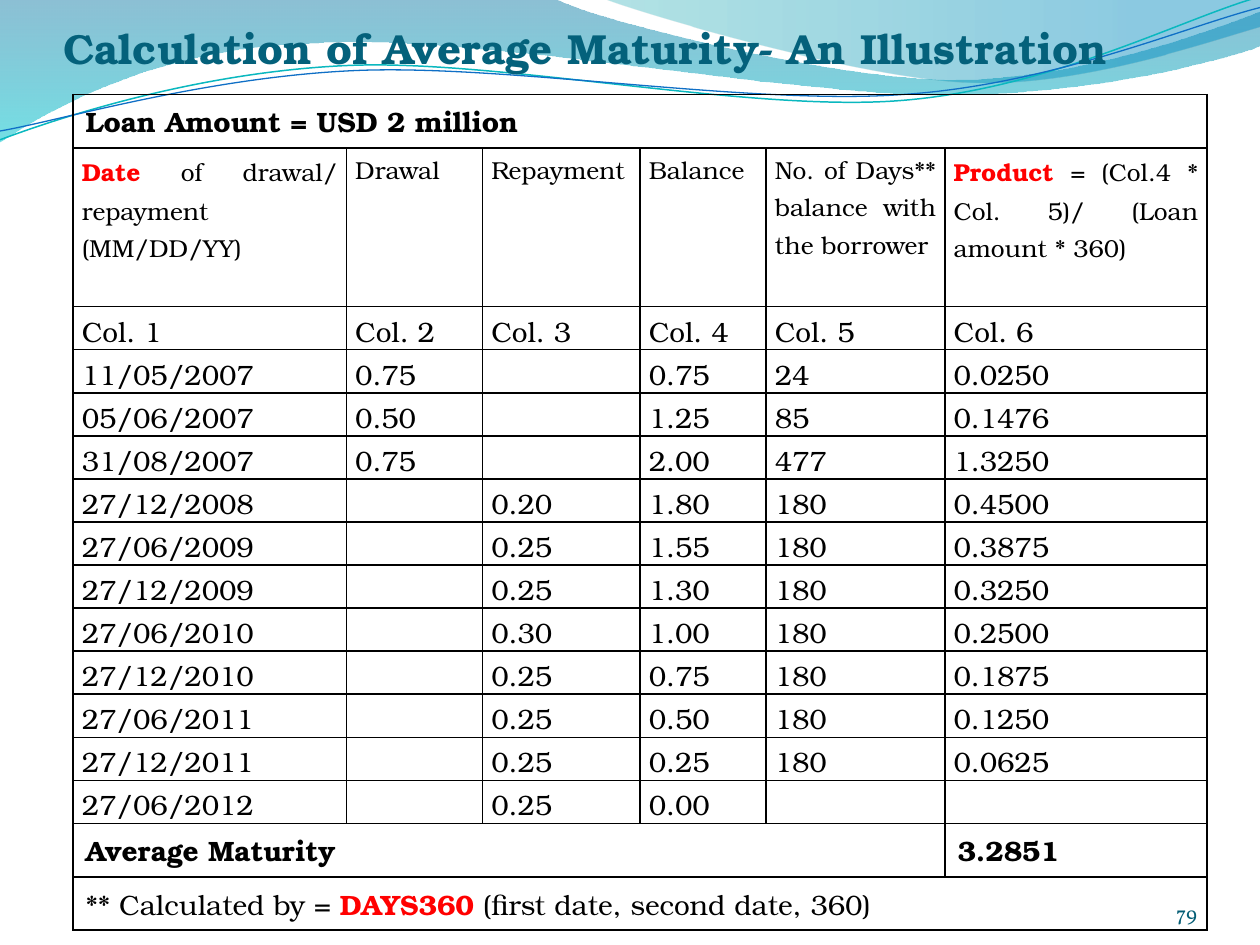
from lxml import etree
from pptx import Presentation
from pptx.dml.color import RGBColor
from pptx.enum.text import MSO_ANCHOR, PP_ALIGN
from pptx.oxml.ns import qn
from pptx.util import Inches, Pt

JUSTIFY, LEFT, RIGHT = PP_ALIGN.JUSTIFY, PP_ALIGN.LEFT, PP_ALIGN.RIGHT
BOTTOM = MSO_ANCHOR.BOTTOM
TITLE_ONLY = 5
FONT, NUMBER_FONT = "TeX Gyre Bonum", "Vollkorn"
BLACK, RED = "000000", "FF0000"

COLUMN_WIDTHS = [2.17, 1.08, 1.25, 1, 1.42, 2.08]
BAND_HEIGHT, HEADER_HEIGHT, ROW_HEIGHT = 0.42, 1.26, 0.34
HEADERS = [
    [("Date", RED, True), (" of drawal/ repayment (MM/DD/YY)", BLACK, False)],
    [("Drawal", BLACK, False)],
    [("Repayment", BLACK, False)],
    [("Balance", BLACK, False)],
    [("No. of Days** balance with the borrower", BLACK, False)],
    [("Product ", RED, True),
     ("= (Col.4 * Col. 5)/ (Loan amount * 360)", BLACK, False)],
]
ROWS = [
    [f"Col. {number}" for number in range(1, 7)],
    ["11/05/2007", "0.75", "", "0.75", "24", "0.0250"],
    ["05/06/2007", "0.50", "", "1.25", "85", "0.1476"],
    ["31/08/2007", "0.75", "", "2.00", "477", "1.3250"],
    ["27/12/2008", "", "0.20", "1.80", "180", "0.4500"],
    ["27/06/2009", "", "0.25", "1.55", "180", "0.3875"],
    ["27/12/2009", "", "0.25", "1.30", "180", "0.3250"],
    ["27/06/2010", "", "0.30", "1.00", "180", "0.2500"],
    ["27/12/2010", "", "0.25", "0.75", "180", "0.1875"],
    ["27/06/2011", "", "0.25", "0.50", "180", "0.1250"],
    ["27/12/2011", "", "0.25", "0.25", "180", "0.0625"],
    ["27/06/2012", "", "0.25", "0.00", "", ""],
]

# Wave outlines in thousandths of the slide width: 2 numbers are a line, 6 a curve.
WAVES = [
    ([(0, 0), (440, -1), (476, 17, 664, 63, 758, 63),
      (853, 63, 958, 26, 1000, 9), (1001, 36),
      (983, 44, 870, 76, 746, 75), (622, 75, 382, 28, 257, 34),
      (129, 36, 46, 83, -1, 113)],
     [(0, "0074A1", 45), (1, "00C6CF", 55)], 270),
    ([(479, -1), (509, 11, 682, 62, 769, 65),
      (856, 69, 961, 32, 1000, 21), (1000, 0)],
     [(0, "00A1A9", 30), (0.8, "008BBF", 45)], 0),
]
RIBBONS = [
    ([(0, 111), (48, 93, 158, 57, 277, 52),
      (395, 47, 593, 89, 713, 80), (833, 71, 938, 15, 998, -2)],
     "0AB8BF", 0.85),
    ([(0, 104), (47, 96, 164, 61, 283, 56),
      (403, 51, 597, 84, 717, 75), (836, 67, 941, 21, 1000, 6)],
     "0F6FC6", 0.75),
]


def color(value):
    return RGBColor.from_string(value)


def add_outline(slide, segments, unit, close):
    """Build the outline through its end points, then bend the curved segments."""
    ends = [segment[-2:] for segment in segments]
    builder = slide.shapes.build_freeform(*ends[0], scale=unit)
    builder.add_line_segments(ends[1:], close=close)
    shape = builder.convert_to_shape()
    shape.shadow.inherit = False
    left, top = (min(axis) for axis in zip(*ends))
    lines = list(shape._element.iter(qn("a:lnTo")))
    for line, segment in zip(lines, segments[1:]):
        if len(segment) == 2:
            continue
        curve = etree.Element(qn("a:cubicBezTo"))
        for x, y in zip(segment[::2], segment[1::2]):
            etree.SubElement(curve, qn("a:pt"), x=str(x - left), y=str(y - top))
        line.getparent().replace(line, curve)
    return shape


def add_wave(slide, segments, stops, angle, unit):
    shape = add_outline(slide, segments, unit, True)
    shape.line.fill.background()
    shape.fill.gradient()
    shape.fill.gradient_angle = angle
    for stop, (position, value, _) in zip(shape.fill.gradient_stops, stops):
        stop.position = position
        stop.color.rgb = color(value)
    tints = list(shape._element.spPr.iter(qn("a:srgbClr")))
    for tint, (_, _, opacity) in zip(tints, stops):
        etree.SubElement(tint, qn("a:alpha"), val=str(opacity * 1000))


def add_ribbon(slide, segments, value, thickness, unit):
    shape = add_outline(slide, segments, unit, False)
    shape.fill.background()
    shape.line.color.rgb = color(value)
    shape.line.width = Pt(thickness)
    return shape


def add_decoration(slide, width):
    unit = width / 1000
    for wave in WAVES:
        add_wave(slide, *wave, unit)
    slide.shapes.add_group_shape([add_ribbon(slide, *ribbon, unit)
                                  for ribbon in RIBBONS])


def write(text_frame, runs, size, font=FONT, align=LEFT, spacing=None):
    """Fill the first paragraph with (text, colour, bold) runs."""
    paragraph = text_frame.paragraphs[0]
    paragraph.alignment, paragraph.line_spacing = align, spacing
    for text, value, bold in runs:
        run = paragraph.add_run()
        run.text = text
        formats = {"name": font, "size": Pt(size), "bold": bold}
        for name, setting in formats.items():
            setattr(run.font, name, setting)
        run.font.color.rgb = color(value)


def set_frame(text_frame, top=0):
    formats = {"margin_left": 0, "margin_top": Inches(top), "margin_right": 0,
               "margin_bottom": 0, "vertical_anchor": BOTTOM, "word_wrap": True}
    for name, setting in formats.items():
        setattr(text_frame, name, setting)


def add_title(slide, box):
    title = slide.shapes.title
    title._element.getparent().append(title._element)  # in front of the waves
    for name, length in zip(("left", "top", "width", "height"), box):
        setattr(title, name, Inches(length))
    set_frame(title.text_frame, 0.05)
    write(title.text_frame,
          [("Calculation of Average Maturity- An Illustration", "04617B", True)], 24)


def add_page_number(slide, box):
    number = slide.shapes.add_textbox(*map(Inches, box))
    set_frame(number.text_frame)
    write(number.text_frame, [("79", "045D75", False)], 12, NUMBER_FONT, RIGHT)


def style_cell(cell):
    cell.fill.background()
    properties = cell._tc.get_or_add_tcPr()
    for index, side in enumerate(("lnL", "lnR", "lnT", "lnB")):
        line = etree.Element(qn(f"a:{side}"), w=str(Pt(1)))
        fill = etree.SubElement(line, qn("a:solidFill"))
        etree.SubElement(fill, qn("a:srgbClr"), val=BLACK)
        properties.insert(index, line)


def fill_row(table, row, contents, size):
    for column, runs in enumerate(contents):
        cell = table.cell(row, column)
        cell.margin_left = cell.margin_right = Inches(0.07)
        cell.margin_top = cell.margin_bottom = 0
        write(cell.text_frame, runs, size, align=JUSTIFY, spacing=1.15)


def fill_band(table, row, last_column, runs):
    table.cell(row, 0).merge(table.cell(row, last_column))
    write(table.cell(row, 0).text_frame, runs, 16)


def add_maturity_table(slide, left, top):
    heights = [BAND_HEIGHT, HEADER_HEIGHT, *[ROW_HEIGHT] * len(ROWS),
               BAND_HEIGHT, BAND_HEIGHT]
    box = (left, top, sum(COLUMN_WIDTHS), sum(heights))
    table = slide.shapes.add_table(len(heights), len(COLUMN_WIDTHS),
                                   *map(Inches, box)).table
    table.first_row = table.horz_banding = False
    for column, width in zip(table.columns, COLUMN_WIDTHS):
        column.width = Inches(width)
    for row, height in zip(table.rows, heights):
        row.height = Inches(height)
    for cell in table.iter_cells():
        style_cell(cell)

    fill_band(table, 0, 5, [("Loan Amount = USD 2 million", BLACK, True)])
    fill_row(table, 1, HEADERS, 14)
    for row, values in enumerate(ROWS, 2):
        fill_row(table, row,
                 [[(value, BLACK, False)] if value else [] for value in values], 16)
    total = len(heights) - 2
    fill_band(table, total, 4, [("Average Maturity", BLACK, True)])
    write(table.cell(total, 5).text_frame, [("3.2851", BLACK, True)], 16)
    fill_band(table, total + 1, 5, [("** Calculated by = ", BLACK, False),
                                    ("DAYS360", RED, True),
                                    (" (first date, second date, 360)", BLACK, False)])


def main():
    presentation = Presentation()
    presentation.slide_width, presentation.slide_height = Inches(10), Inches(7.5)
    slide = presentation.slides.add_slide(presentation.slide_layouts[TITLE_ONLY])
    add_decoration(slide, presentation.slide_width)
    add_title(slide, (0.5, 0, 9, 0.58))
    add_maturity_table(slide, 0.58, 0.75)
    add_page_number(slide, (8.67, 6.95, 0.83, 0.4))
    presentation.save("out.pptx")


if __name__ == "__main__":
    main()
